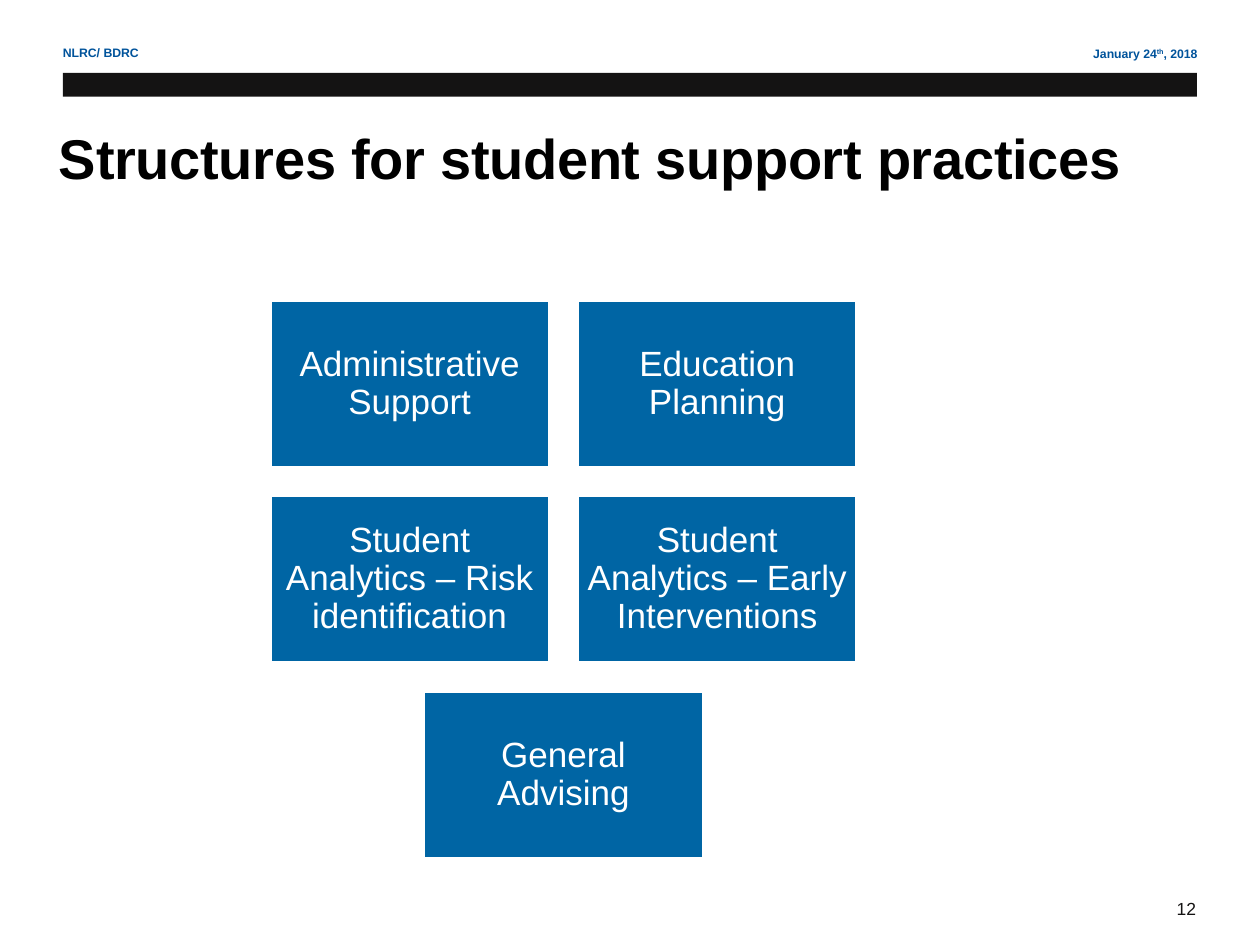
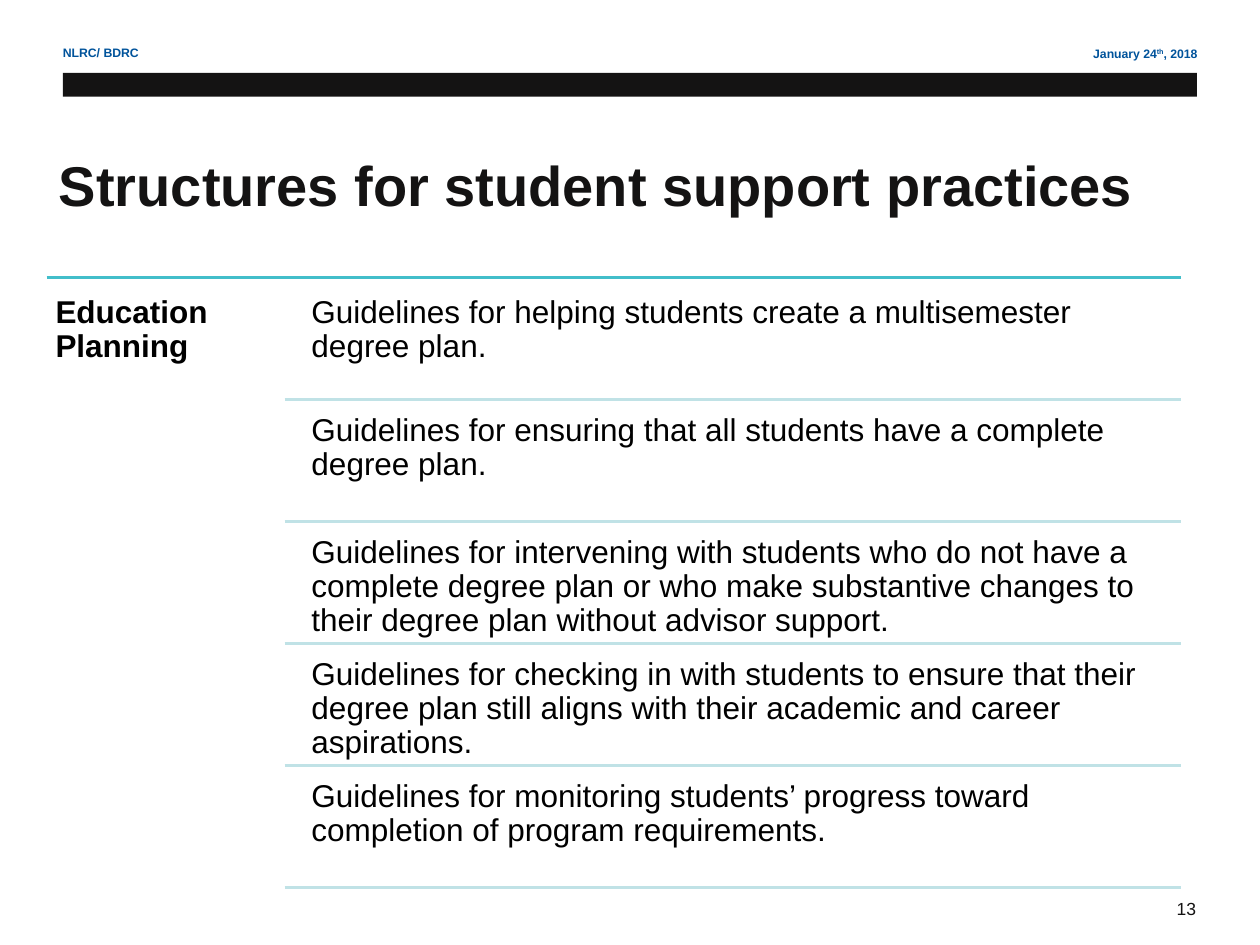
from lxml.etree import SubElement
from pptx import Presentation
from pptx.dml.color import RGBColor
from pptx.enum.shapes import MSO_CONNECTOR, MSO_SHAPE
from pptx.enum.text import MSO_ANCHOR, PP_ALIGN
from pptx.oxml.ns import qn
from pptx.util import Cm, Pt

INK = RGBColor(0x14, 0x13, 0x13)
BLACK = RGBColor(0x00, 0x00, 0x00)
WHITE = RGBColor(0xFF, 0xFF, 0xFF)
HEADER_BLUE = RGBColor(0x00, 0x53, 0x9B)
TILE_BLUE = RGBColor(0x00, 0x65, 0xA4)
TEAL = RGBColor(0x42, 0xBE, 0xCA)
PALE_TEAL = RGBColor(0xC0, 0xE2, 0xE6)

FONT = "Arial"
TITLE = "Structures for student support practices"
ORGANISATIONS = "NLRC/ BDRC"
TILES = [
    "Administrative Support",
    "Education Planning",
    "Student Analytics – Risk identification",
    "Student Analytics – Early Interventions",
    "General Advising",
]
GUIDELINES = [
    "Guidelines for helping students create a multisemester degree plan.",
    "Guidelines for ensuring that all students have a complete degree plan.",
    "Guidelines for intervening with students who do not have a complete degree plan "
    "or who make substantive changes to their degree plan without advisor support.",
    "Guidelines for checking in with students to ensure that their degree plan still "
    "aligns with their academic and career aspirations.",
    "Guidelines for monitoring students’ progress toward completion of program requirements.",
]


def add_run(paragraph, text, size, color, bold=False):
    """Append one formatted run and return it."""
    run = paragraph.add_run()
    run.text = text
    run.font.name = FONT
    run.font.size = Pt(size)
    run.font.bold = bold
    run.font.color.rgb = color
    return run


def set_margins(frame, side, top):
    """Set the inner margins of a text frame in centimetres."""
    frame.margin_left = frame.margin_right = frame.margin_bottom = Cm(side)
    frame.margin_top = Cm(top)


def add_text_frame(slide, left, top, width, height):
    """Add a wrapping text box and return its frame."""
    text_box = slide.shapes.add_textbox(Cm(left), Cm(top), Cm(width), Cm(height))
    text_box.text_frame.word_wrap = True
    return text_box.text_frame


def add_rectangle(slide, left, top, width, height, fill):
    """Add a flat filled rectangle without an outline."""
    shape = slide.shapes.add_shape(
        MSO_SHAPE.RECTANGLE, Cm(left), Cm(top), Cm(width), Cm(height))
    shape.shadow.inherit = False
    shape.fill.solid()
    shape.fill.fore_color.rgb = fill
    shape.line.fill.background()
    return shape


def add_rule(slide, left, right, y, color):
    """Add a horizontal line."""
    rule = slide.shapes.add_connector(
        MSO_CONNECTOR.STRAIGHT, Cm(left), Cm(y), Cm(right), Cm(y))
    rule.line.color.rgb = color
    rule.line.width = Pt(2)
    SubElement(rule._element.spPr, qn("a:effectLst"))


def add_frame(slide, page_number):
    """Add the header texts, the dark band and the page number."""
    date = add_text_frame(slide, 16.31, 0.81, 8.08, 0.56).paragraphs[0]
    date.alignment = PP_ALIGN.RIGHT
    add_run(date, "January 24", 7, HEADER_BLUE, True)
    ordinal = add_run(date, "th", 7, HEADER_BLUE, True)
    ordinal.font._element.set("baseline", "30000")
    add_run(date, ", 2018", 7, HEADER_BLUE, True)
    number = add_text_frame(slide, 23.47, 17.98, 1.17, 0.69).paragraphs[0]
    add_run(number, str(page_number), 10, INK)
    add_rectangle(slide, 1.27, 1.47, 22.86, 0.48, INK)
    organisations = add_text_frame(slide, 1.02, 0.79, 9.04, 0.56).paragraphs[0]
    add_run(organisations, ORGANISATIONS, 7, HEADER_BLUE, True)


def add_title(slide, top, color, anchor):
    """Add the slide title and return its run."""
    frame = add_text_frame(slide, 0.94, top, 22.86, 3.18)
    frame.vertical_anchor = anchor
    frame.margin_top = Cm(0.29) if anchor == MSO_ANCHOR.TOP else Cm(0.13)
    return add_run(frame.paragraphs[0], TITLE, 32, color, True)


def add_body_text(frame, text, size, color, bold=False):
    """Fill a frame with one tightly spaced paragraph and return it."""
    paragraph = frame.paragraphs[0]
    paragraph.line_spacing = 0.9
    add_run(paragraph, text, size, color, bold)
    return paragraph


def add_tiles(slide, left, top, width, columns=2, gap=0.56, tile_height=3.38):
    """Lay out the tiles in rows, centring a row that is not full."""
    tile_width = (width - gap * (columns - 1)) / columns
    for start in range(0, len(TILES), columns):
        row = TILES[start:start + columns]
        row_width = len(row) * (tile_width + gap) - gap
        row_left = left + (width - row_width) / 2
        row_top = top + start // columns * (tile_height + gap)
        for column, label in enumerate(row):
            tile = add_rectangle(slide, row_left + column * (tile_width + gap),
                                 row_top, tile_width, tile_height, TILE_BLUE)
            tile.line.color.rgb = WHITE
            tile.line.width = Pt(2)
            frame = tile.text_frame
            frame.word_wrap = True
            frame.vertical_anchor = MSO_ANCHOR.MIDDLE
            set_margins(frame, 0.2, 0.2)
            add_body_text(frame, label, 20, WHITE).alignment = PP_ALIGN.CENTER


def add_guidelines(slide, left, top, width, pitch=2.46):
    """Add the topic label and its guidelines, each closed by a rule."""
    right = left + width
    text_left = left + 5.16
    add_rule(slide, left, right, top, TEAL)
    topic = add_text_frame(slide, left, top, 4.83, len(GUIDELINES) * pitch)
    set_margins(topic, 0.18, 0.38)
    add_body_text(topic, "Education Planning", 18, BLACK, True)
    for index, guideline in enumerate(GUIDELINES):
        row_top = top + index * pitch
        text_gap = 0.12 if index else 0.2
        frame = add_text_frame(slide, text_left, row_top + text_gap, right - text_left, 2.34)
        set_margins(frame, 0.18, 0.18)
        add_body_text(frame, guideline, 18, BLACK)
        add_rule(slide, left + 4.8, right, row_top + pitch, PALE_TEAL)


def build_overview_slide(presentation):
    """Build the slide with the five structures."""
    slide = presentation.slides.add_slide(presentation.slide_layouts[6])
    add_frame(slide, 12)
    title = add_title(slide, 2.21, BLACK, MSO_ANCHOR.TOP)
    title.font._element.set("spc", "-20")
    add_tiles(slide, 5.44, 6.05, 11.84)


def build_planning_slide(presentation):
    """Build the slide with the education planning guidelines."""
    slide = presentation.slides.add_slide(presentation.slide_layouts[6])
    add_frame(slide, 13)
    add_guidelines(slide, 0.94, 5.59, 22.86)
    add_title(slide, 2.11, INK, MSO_ANCHOR.MIDDLE)


def main():
    """Build and save the presentation."""
    presentation = Presentation()
    presentation.slide_width = Cm(25.4)
    presentation.slide_height = Cm(19.05)
    build_overview_slide(presentation)
    build_planning_slide(presentation)
    presentation.save("out.pptx")


if __name__ == "__main__":
    main()
